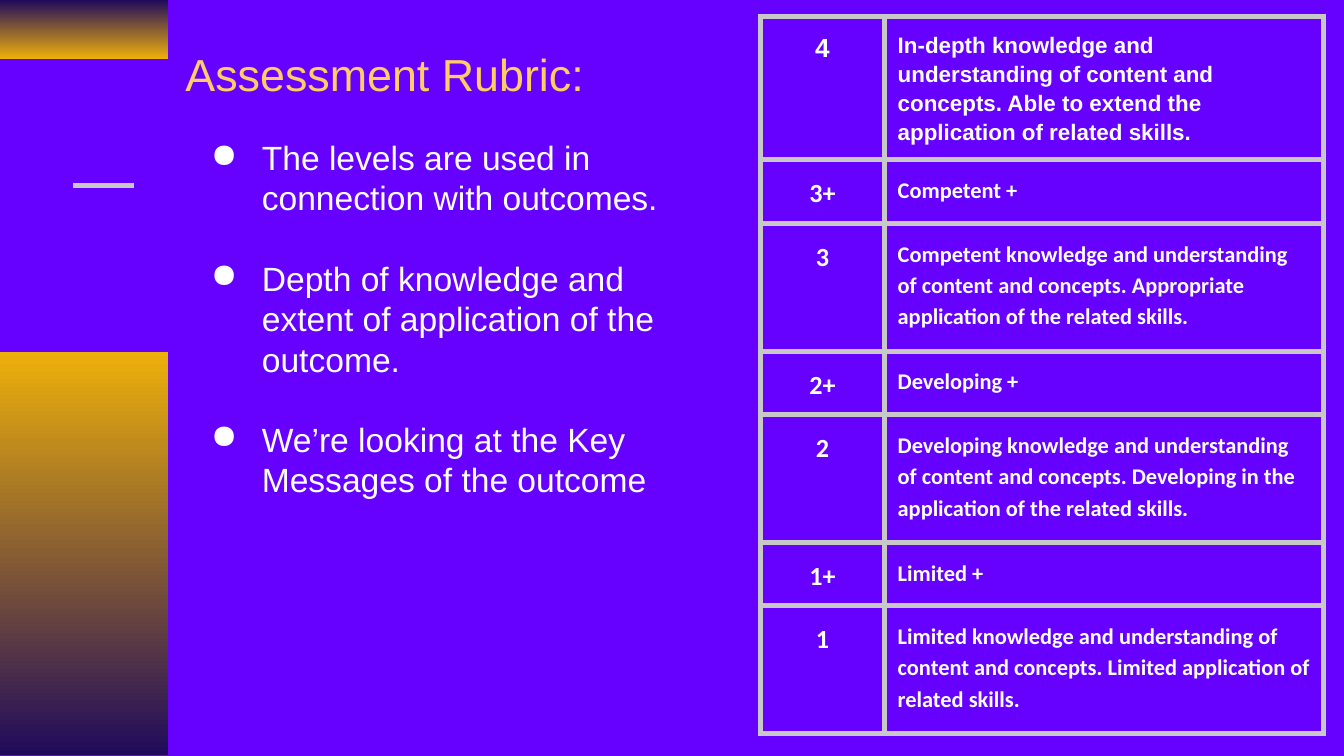
from lxml import etree
from pptx import Presentation
from pptx.dml.color import RGBColor
from pptx.enum.shapes import MSO_CONNECTOR, MSO_SHAPE
from pptx.enum.text import MSO_ANCHOR, PP_ALIGN
from pptx.oxml.ns import qn
from pptx.util import Emu, Inches, Pt

BACKGROUND, WHITE, GREY = "6600FF", "FFFFFF", "C8C8C8"
NAVY, GOLD, TITLE_COLOR = "200B5B", "EEB00B", "FFCC66"

TITLE = "Assessment Rubric:"
POINTS = [
    "The levels are used in connection with outcomes.",
    "Depth of knowledge and extent of application of the outcome.",
    "We’re looking at the Key Messages of the outcome",
]
# level, description, row height, font
RUBRIC = [
    ("4", "In-depth knowledge and understanding of content and concepts. "
          "Able to extend the application of related skills.", 1.07, "Arial"),
    ("3+", "Competent +", 0.45, "Calibri"),
    ("3", "Competent knowledge and understanding of content and concepts. "
          "Appropriate application of the related skills.", 0.95, "Calibri"),
    ("2+", "Developing +", 0.45, "Calibri"),
    ("2", "Developing knowledge and understanding of content and concepts. "
          "Developing in the application of the related skills.", 0.95, "Calibri"),
    ("1+", "Limited +", 0.45, "Calibri"),
    ("1", "Limited knowledge and understanding of content and concepts. "
          "Limited application of related skills.", 0.95, "Calibri"),
]
COLUMNS = [0.92, 3.27]
# top, height, upper colour, lower colour
BANDS = [(0, 0.44, NAVY, GOLD), (2.62, 3, GOLD, NAVY)]
BAND_WIDTH = 1.25
INSET = 0.1


def rgb(color):
    return RGBColor.from_string(color)


def inches(*lengths):
    return [Inches(n) for n in lengths]


def set_insets(box):
    box.margin_left = box.margin_right = Inches(INSET)
    box.margin_top = box.margin_bottom = Inches(INSET)


def write(p, text, size, font="Arial", color=WHITE, bold=False,
          align=PP_ALIGN.LEFT, spacing=1.0, before=0):
    p.alignment, p.line_spacing, p.space_before = align, spacing, Pt(before)
    r = p.add_run()
    r.text = text
    r.font.size, r.font.name, r.font.bold = Pt(size), font, bold
    r.font.color.rgb = rgb(color)


def add_bullet(p):
    pPr = p._p.get_or_add_pPr()
    pPr.set("marL", str(Inches(0.5)))
    pPr.set("indent", str(Inches(-0.38)))
    color = etree.SubElement(pPr, qn("a:buClr"))
    etree.SubElement(color, qn("a:srgbClr"), val=WHITE)
    etree.SubElement(pPr, qn("a:buChar"), char="●")


def add_borders(cell, color, width):
    tcPr = cell._tc.get_or_add_tcPr()
    for i, side in enumerate(("a:lnL", "a:lnR", "a:lnT", "a:lnB")):
        ln = etree.Element(qn(side), w=str(Pt(width)))
        fill = etree.SubElement(ln, qn("a:solidFill"))
        etree.SubElement(fill, qn("a:srgbClr"), val=color)
        tcPr.insert(i, ln)


def add_decoration(slide):
    for top, height, *colors in BANDS:
        sp = slide.shapes.add_shape(MSO_SHAPE.RECTANGLE, *inches(0, top, BAND_WIDTH, height))
        sp.shadow.inherit = False
        sp.line.fill.background()
        sp.fill.gradient()
        sp.fill.gradient_angle = 270
        for stop, color in zip(sp.fill.gradient_stops, colors):
            stop.color.rgb = rgb(color)
    dash = slide.shapes.add_connector(MSO_CONNECTOR.STRAIGHT, *inches(0.54, 1.38, 1, 1.38))
    dash.line.color.rgb = rgb(GREY)
    dash.line.width = Pt(3)
    etree.SubElement(dash._element.spPr, qn("a:effectLst"))


def add_title(slide):
    sp = slide.shapes.title
    sp.left, sp.top, sp.width, sp.height = inches(1.28, 0.17, 4.38, 0.75)
    tf = sp.text_frame
    tf.word_wrap = True
    tf.vertical_anchor = MSO_ANCHOR.MIDDLE
    set_insets(tf)
    write(tf.paragraphs[0], TITLE, 24, color=TITLE_COLOR)


def add_rubric(slide):
    heights = [row[2] for row in RUBRIC]
    frame = slide.shapes.add_table(len(RUBRIC), len(COLUMNS),
                                   *inches(5.66, 0.12, sum(COLUMNS), sum(heights)))
    table = frame.table
    table.first_row = table.horz_banding = False
    for column, width in zip(table.columns, COLUMNS):
        column.width = Inches(width)
    for r, (level, description, height, font) in enumerate(RUBRIC):
        table.rows[r].height = Inches(height)
        formats = [(level, 14, PP_ALIGN.CENTER), (description, 12, PP_ALIGN.LEFT)]
        for c, (text, size, align) in enumerate(formats):
            cell = table.cell(r, c)
            set_insets(cell)
            cell.fill.background()
            add_borders(cell, GREY, 3)
            write(cell.text_frame.paragraphs[0], text, size, font,
                  bold=True, align=align, spacing=1.15)


def add_points(slide):
    tf = slide.shapes.add_textbox(*inches(1.35, 0.92, 3.71, 3.2)).text_frame
    tf.word_wrap = True
    set_insets(tf)
    for i, text in enumerate(POINTS):
        p = tf.add_paragraph() if i else tf.paragraphs[0]
        add_bullet(p)
        write(p, text, 18, before=21.5 if i else 0)


def main():
    prs = Presentation()
    prs.slide_width, prs.slide_height = Inches(10), Emu(5143500)
    slide = prs.slides.add_slide(prs.slide_layouts[5])
    slide.background.fill.solid()
    slide.background.fill.fore_color.rgb = rgb(BACKGROUND)
    add_decoration(slide)
    add_title(slide)
    add_rubric(slide)
    add_points(slide)
    prs.save("out.pptx")


if __name__ == "__main__":
    main()
